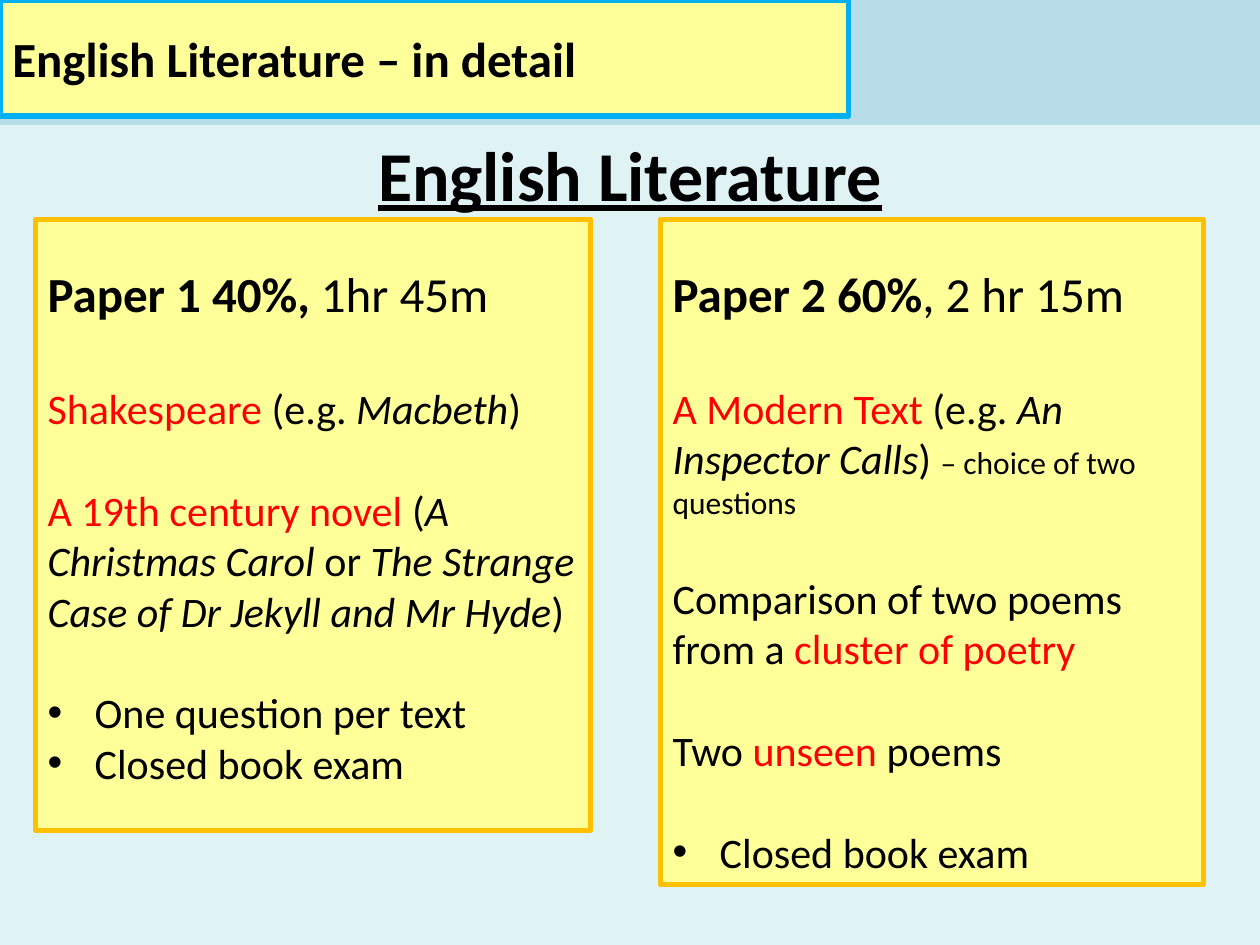
from lxml.etree import SubElement
from pptx import Presentation
from pptx.dml.color import RGBColor
from pptx.enum.shapes import MSO_SHAPE
from pptx.enum.text import MSO_ANCHOR, PP_ALIGN
from pptx.oxml.ns import qn
from pptx.util import Cm, Pt

BLACK, RED, YELLOW, ORANGE = "000000", "FF0000", "FFFF99", "FFC000"
INDENT = Cm(0.95)
LINE_HEIGHT = 1.22  # Calibri line height relative to its size

# Text styles: size, colour, bold, italic
HEAD = (28, BLACK, True, False)
TIME = (28, BLACK, False, False)
PLAIN = (24, BLACK, False, False)
TOPIC = (24, RED, False, False)
BOOK = (24, BLACK, False, True)
NOTE = (18, BLACK, False, False)

# Each paragraph: size of the line left free above it, bulleted, spans
PAPER_1 = [
    (0, False, [("Paper 1 40%,", HEAD), (" 1hr 45m", TIME)]),
    (28, False, [("Shakespeare ", TOPIC), ("(e.g. ", PLAIN),
                 ("Macbeth", BOOK), (")", PLAIN)]),
    (24, False, [("A 19th century novel ", TOPIC), ("(", PLAIN),
                 ("A Christmas Carol ", BOOK), ("or ", PLAIN),
                 ("The Strange Case of Dr Jekyll and Mr Hyde", BOOK), (")", PLAIN)]),
    (24, True, [("One question per text", PLAIN)]),
    (0, True, [("Closed book exam", PLAIN)]),
]
PAPER_2 = [
    (0, False, [("Paper 2 60%", HEAD), (", 2 hr 15m", TIME)]),
    (28, False, [("A Modern Text ", TOPIC), ("(e.g. ", PLAIN),
                 ("An Inspector Calls", BOOK), (") ", PLAIN),
                 ("– choice of two questions", NOTE)]),
    (24, False, [("Comparison of two poems from a ", PLAIN),
                 ("cluster of poetry", TOPIC)]),
    (24, False, [("Two ", PLAIN), ("unseen ", TOPIC), ("poems", PLAIN)]),
    (24, True, [("Closed book exam", PLAIN)]),
]
# Left, width, height in cm, paragraphs
PAPERS = [(0.71, 11.2, 12.32, PAPER_1), (13.31, 10.95, 13.41, PAPER_2)]
PAPER_TOP = 4.42


def color(hex_string):
    return RGBColor.from_string(hex_string)


def add_box(page, left, top, width, height, fill, line=None):
    box = page.shapes.add_shape(MSO_SHAPE.RECTANGLE, Cm(left), Cm(top),
                                Cm(width), Cm(height))
    box.shadow.inherit = False
    box.fill.solid()
    box.fill.fore_color.rgb = color(fill)
    if line:
        box.line.color.rgb = color(line)
        box.line.width = Pt(3)
    else:
        box.line.fill.background()
    box.text_frame.word_wrap = True
    box.text_frame.vertical_anchor = MSO_ANCHOR.TOP
    return box


def format_span(span, style):
    size, hex_string, bold, italic = style
    font = span.font
    font.name = "Calibri"
    font.size = Pt(size)
    font.color.rgb = color(hex_string)
    font.bold = bold
    font.italic = italic


def add_bullet(para):
    properties = para._p.get_or_add_pPr()
    properties.set("marL", str(INDENT))
    properties.set("indent", str(-INDENT))
    SubElement(properties, qn("a:buFont"), typeface="Arial")
    SubElement(properties, qn("a:buChar"), char="•")


def write_heading(box, text, size, align):
    para = box.text_frame.paragraphs[0]
    para.text = text
    para.alignment = align
    format_span(para.runs[0], (size, BLACK, True, False))
    return para.runs[0]


def write_paper(box, paragraphs):
    frame = box.text_frame
    frame.margin_top = Cm(0.9)
    for index, (gap, bulleted, spans) in enumerate(paragraphs):
        para = frame.add_paragraph() if index else frame.paragraphs[0]
        para.alignment = PP_ALIGN.LEFT
        para.space_before = Pt(round(gap * LINE_HEIGHT, 1))
        if bulleted:
            add_bullet(para)
        for text, style in spans:
            span = para.add_run()
            span.text = text
            format_span(span, style)


def main():
    deck = Presentation()
    deck.slide_width, deck.slide_height = Cm(25.4), Cm(19.05)
    page = deck.slides.add_slide(deck.slide_layouts[6])
    page.background.fill.solid()
    page.background.fill.fore_color.rgb = color("B7DEE8")

    banner = add_box(page, 0, 0, 17.1, 2.34, YELLOW, "00B0F0")
    banner.text_frame.vertical_anchor = MSO_ANCHOR.MIDDLE
    write_heading(banner, "English Literature – in detail", 28, PP_ALIGN.LEFT)

    panel = add_box(page, 0, 2.52, 25.4, 16.53, "DFF3F5")
    subject = write_heading(panel, "English Literature", 40, PP_ALIGN.CENTER)
    subject.font.underline = True

    for left, width, height, paragraphs in PAPERS:
        box = add_box(page, left, PAPER_TOP, width, height, YELLOW, ORANGE)
        write_paper(box, paragraphs)

    deck.save("out.pptx")


if __name__ == "__main__":
    main()
